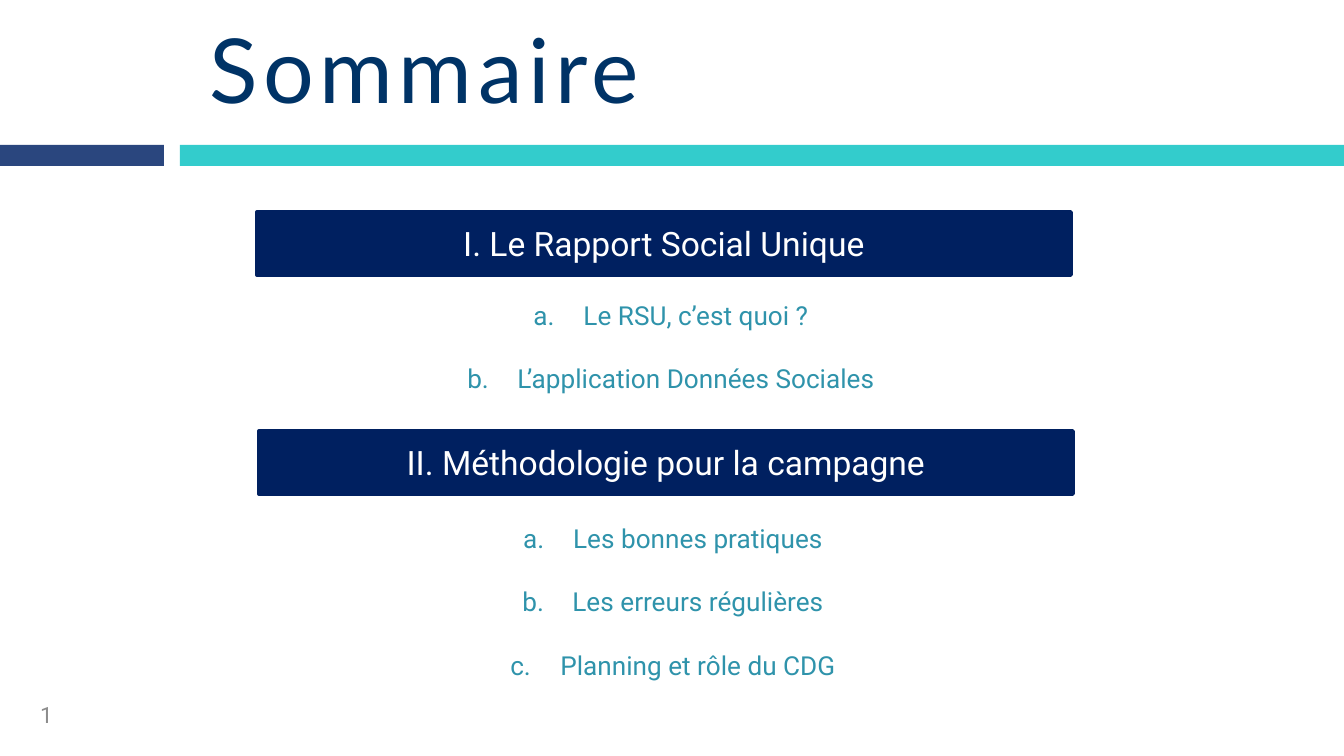
from lxml import etree
from pptx import Presentation
from pptx.dml.color import RGBColor
from pptx.enum.shapes import MSO_SHAPE
from pptx.enum.text import MSO_ANCHOR, MSO_AUTO_SIZE, PP_ALIGN
from pptx.oxml.ns import qn
from pptx.util import Emu, Pt

RECTANGLE = MSO_SHAPE.RECTANGLE
LEFT, CENTER = PP_ALIGN.LEFT, PP_ALIGN.CENTER
TOP, MIDDLE = MSO_ANCHOR.TOP, MSO_ANCHOR.MIDDLE
FIXED, GROW = MSO_AUTO_SIZE.NONE, MSO_AUTO_SIZE.SHAPE_TO_FIT_TEXT

EMU_PER_PX = 914400 / 134.4
NAVY, TURQUOISE, BLUE = "002060", "33CCCC", "2A467E"
TITLE_BLUE, TEAL, GRAY, WHITE = "003366", "2F93AB", "8C8C8C", "FFFFFF"

SECTIONS = [
    ((257, 212, 814, 190), "I. Le Rapport Social Unique",
     ["Le RSU, c’est quoi ?", "L’application Données Sociales"]),
    ((259, 431, 814, 257), "II. Méthodologie pour la campagne",
     ["Les bonnes pratiques", "Les erreurs régulières", "Planning et rôle du CDG"]),
]


def px(length):
    return Emu(round(length * EMU_PER_PX))


def color(value):
    return RGBColor.from_string(value)


def place(shape, box):
    shape.left, shape.top, shape.width, shape.height = map(px, box)


def add_numbering(paragraph, font):
    properties = paragraph._p.get_or_add_pPr()
    etree.SubElement(properties, qn("a:buFont"), typeface=font)
    etree.SubElement(properties, qn("a:buAutoNum"), type="alphaLcPeriod")


def write_text(shape, lines, *, size, fill, font="Roboto", align=LEFT, anchor=MIDDLE,
               fit=FIXED, margin=0, indent=0, gap=0, spacing=0, numbered=False):
    frame = shape.text_frame
    frame.word_wrap = True
    frame.auto_size = fit
    frame.vertical_anchor = anchor
    for index, line in enumerate(lines):
        paragraph = frame.add_paragraph() if index else frame.paragraphs[0]
        if numbered:
            add_numbering(paragraph, font)
        paragraph.alignment = align
        paragraph.space_before = Pt(gap if index else 0)
        properties = paragraph._p.get_or_add_pPr()
        properties.set("marL", str(px(margin)))
        properties.set("indent", str(px(indent)))
        run = paragraph.add_run()
        run.text = line
        run.font.name = font
        run.font.size = Pt(size)
        run.font.color.rgb = color(fill)
        if spacing:
            run._r.get_or_add_rPr().set("spc", str(spacing * 100))


def add_rectangle(slide, box, fill):
    shape = slide.shapes.add_shape(RECTANGLE, *map(px, box))
    shape.shadow.inherit = False
    shape.fill.solid()
    shape.fill.fore_color.rgb = color(fill)
    shape.line.fill.background()
    return shape


def add_header(slide, box):
    left, top, width, height = box
    bar_height, bar_width, gap = 21, 164, 16
    bar_top = top + height - bar_height
    start = bar_width + gap
    add_rectangle(slide, (left + start, bar_top, width - start, bar_height), TURQUOISE)
    add_rectangle(slide, (left, bar_top, bar_width, bar_height), BLUE)
    title = slide.shapes.title
    place(title, (left + 142, top + 11, 1038, 113))
    write_text(title, ["Sommaire"], size=48, fill=TITLE_BLUE, font="Lato",
               margin=54, spacing=3)


def add_section(slide, placeholder, box, heading, items):
    left, top, width, height = box
    banner = add_rectangle(slide, (left, top, width, 63), NAVY)
    banner.line.color.rgb = color(NAVY)
    banner.line.width = Pt(2)
    write_text(banner, [heading], size=18, fill=WHITE, align=CENTER)
    list_height = 63 * len(items) - 17
    place(placeholder, (left + 84, top + height - list_height, 660, list_height))
    write_text(placeholder, items, size=14, fill=TEAL, align=CENTER, anchor=TOP,
               fit=GROW, margin=50, indent=-50, gap=17, numbered=True)


def add_page_number(slide, box):
    shape = slide.shapes.add_textbox(*map(px, box))
    write_text(shape, ["1"], size=12, fill=GRAY)


def main():
    presentation = Presentation()
    presentation.slide_width, presentation.slide_height = px(1344), px(756)
    slide = presentation.slides.add_slide(presentation.slide_layouts[3])
    add_header(slide, (0, 0, 1344, 166))
    for index, (box, heading, items) in enumerate(SECTIONS, start=1):
        add_section(slide, slide.placeholders[index], box, heading, items)
    add_page_number(slide, (27, 695, 313, 40))
    presentation.save("out.pptx")


if __name__ == "__main__":
    main()
